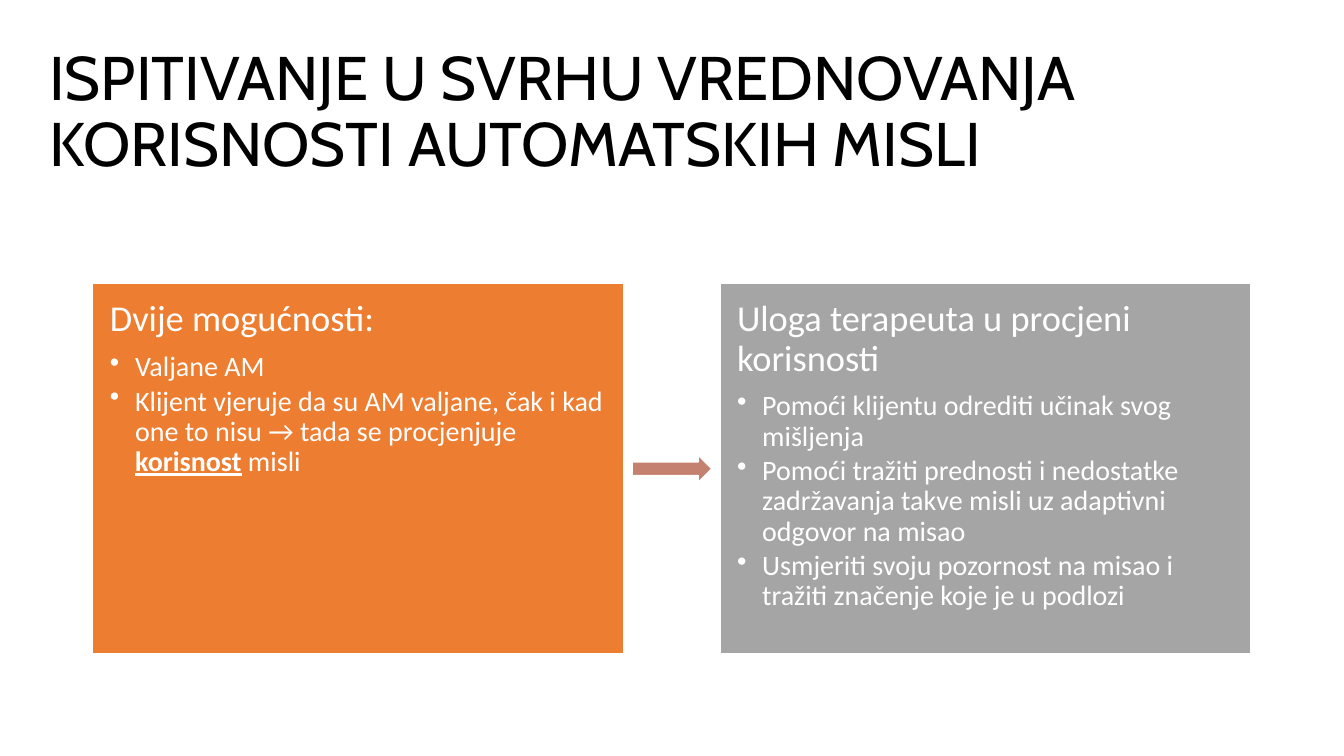
"""Build the slide on testing how useful automatic thoughts are."""
import pptx
import pptx.dml.color
import pptx.enum.shapes
import pptx.enum.text
import pptx.util
from lxml import etree

TITLE = "ISPITIVANJE U SVRHU VREDNOVANJA KORISNOSTI AUTOMATSKIH MISLI"
PANELS = [
    ("orange", "Dvije mogućnosti:", [
        ["Valjane AM"],
        ["Klijent vjeruje da su AM valjane, čak i kad one to nisu → tada se procjenjuje ",
         "korisnost", " misli"],
    ]),
    ("grey", "Uloga terapeuta u procjeni korisnosti", [
        ["Pomoći klijentu odrediti učinak svog mišljenja"],
        ["Pomoći tražiti prednosti i nedostatke zadržavanja takve misli uz adaptivni "
         "odgovor na misao"],
        ["Usmjeriti svoju pozornost na misao i tražiti značenje koje je u podlozi"],
    ]),
]
EMPHASIS = "korisnost"
COLORS = {"orange": "ED7D31", "grey": "A5A5A5", "arrow": "C48170",
          "white": "FFFFFF", "black": "000000"}

WIDTH, HEIGHT = 13.33, 7.5
PANEL_LEFT, PANEL_TOP, PANEL_WIDTH, PANEL_HEIGHT = 0.92, 2.81, 5.27, 3.68
GUTTER, ARROW_GAP, ARROW_HEIGHT = 0.95, 0.08, 0.27
INSET, INDENT = 0.17, 0.25
HEADING_SIZE, BULLET_SIZE = 26, 20

inches = pptx.util.Inches
points = pptx.util.Pt
SHAPES = pptx.enum.shapes.MSO_SHAPE
ANCHOR = pptx.enum.text.MSO_ANCHOR
ALIGN = pptx.enum.text.PP_ALIGN


def color(name):
    return pptx.dml.color.RGBColor.from_string(COLORS[name])


def add_block(page, kind, bounds, fill):
    block = page.shapes.add_shape(kind, *map(inches, bounds))
    block.shadow.inherit = False
    block.fill.solid()
    block.fill.fore_color.rgb = color(fill)
    block.line.color.rgb = color("white")
    block.line.width = points(1)
    return block


def set_frame(frame, anchor, side, top):
    frame.word_wrap = True
    frame.vertical_anchor = anchor
    frame.margin_left = frame.margin_right = inches(side)
    frame.margin_top = frame.margin_bottom = inches(top)


def write(para, texts, size, font, ink, after=0):
    para.alignment = ALIGN.LEFT
    para.line_spacing = 0.9
    para.space_after = points(after)
    for text in texts:
        span = para.add_run()
        span.text = text
        span.font.size = points(size)
        span.font.name = font
        span.font.color.rgb = color(ink)
        if text == EMPHASIS:
            span.font.bold = span.font.underline = True


def add_bullet(para):
    properties = para._p.get_or_add_pPr()
    properties.set("marL", str(inches(INDENT)))
    properties.set("indent", str(-inches(INDENT)))
    bullet = etree.SubElement(properties, pptx.oxml.ns.qn("a:buChar"))
    bullet.set("char", "•")


def add_panel(page, left, fill, heading, bullets):
    bounds = (left, PANEL_TOP, PANEL_WIDTH, PANEL_HEIGHT)
    frame = add_block(page, SHAPES.RECTANGLE, bounds, fill).text_frame
    set_frame(frame, ANCHOR.TOP, INSET, INSET)
    write(frame.paragraphs[0], [heading], HEADING_SIZE, "Calibri", "white",
          0.35 * HEADING_SIZE)
    for texts in bullets:
        para = frame.add_paragraph()
        write(para, texts, BULLET_SIZE, "Calibri", "white", 0.15 * BULLET_SIZE)
        add_bullet(para)


def main():
    deck = pptx.Presentation()
    deck.slide_width, deck.slide_height = inches(WIDTH), inches(HEIGHT)
    page = deck.slides.add_slide(deck.slide_layouts[6])

    title = page.shapes.add_textbox(*map(inches, (0.39, 0.4, 12.72, 1.45))).text_frame
    set_frame(title, ANCHOR.MIDDLE, 0.1, 0.05)
    write(title.paragraphs[0], [TITLE], 44, "Cabin", "black")

    for column, panel in enumerate(PANELS):
        add_panel(page, PANEL_LEFT + column * (PANEL_WIDTH + GUTTER), *panel)

    arrow_left = PANEL_LEFT + PANEL_WIDTH + ARROW_GAP
    arrow_top = PANEL_TOP + (PANEL_HEIGHT - ARROW_HEIGHT) / 2
    arrow_width = GUTTER - 2 * ARROW_GAP
    add_block(page, SHAPES.RIGHT_ARROW,
              (arrow_left, arrow_top, arrow_width, ARROW_HEIGHT), "arrow")

    deck.save("out.pptx")


if __name__ == "__main__":
    main()
